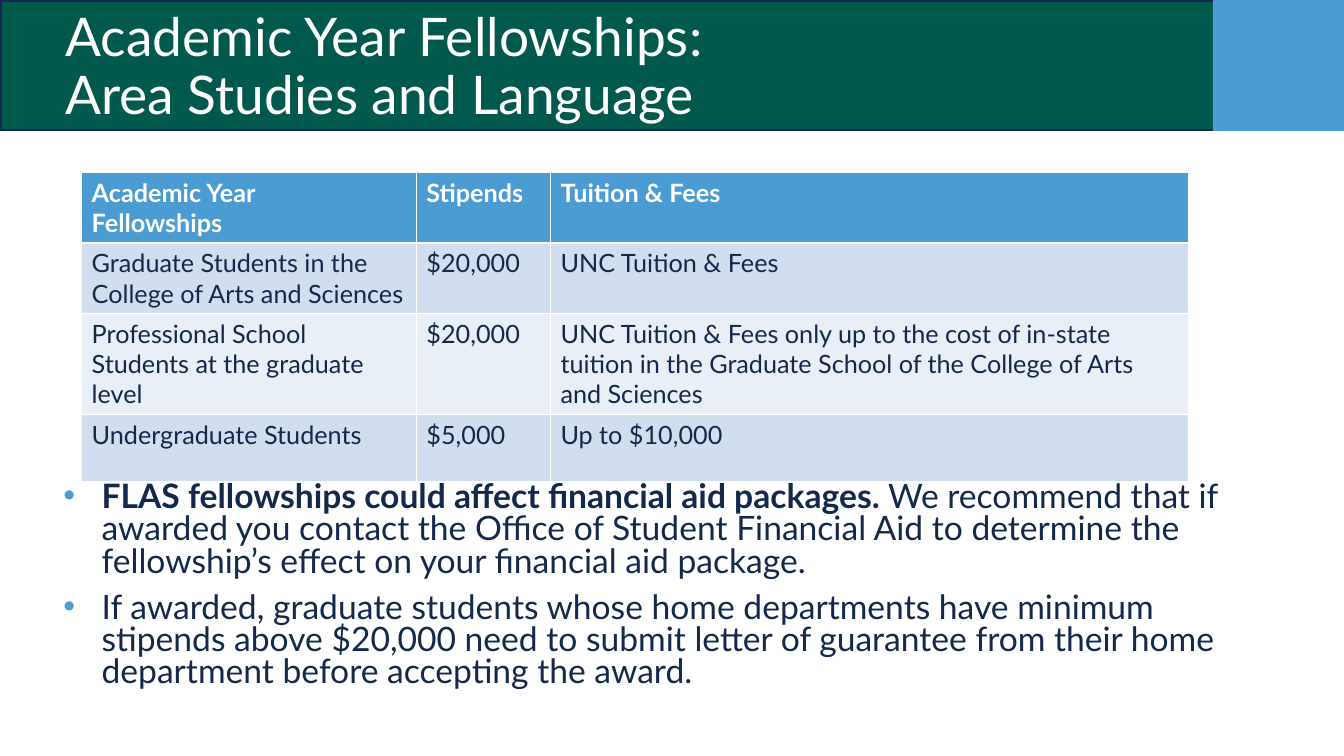
from lxml import etree
from pptx import Presentation
from pptx.dml.color import RGBColor
from pptx.enum.shapes import MSO_SHAPE
from pptx.enum.text import MSO_ANCHOR, MSO_AUTO_SIZE, PP_ALIGN
from pptx.oxml.ns import qn
from pptx.util import Inches, Pt

RECTANGLE = MSO_SHAPE.RECTANGLE
BOTTOM = MSO_ANCHOR.BOTTOM
LEFT = PP_ALIGN.LEFT
NO_AUTOFIT = MSO_AUTO_SIZE.NONE

# Content
TITLE_LINES = ["Academic Year Fellowships:", "Area Studies and Language"]
TABLE_ROWS = [
    ("Academic Year\nFellowships", "Stipends", "Tuition & Fees"),
    ("Graduate Students in the College of Arts and Sciences", "$20,000",
     "UNC Tuition & Fees"),
    ("Professional School Students at the graduate level", "$20,000",
     "UNC Tuition & Fees only up to the cost of in-state tuition in the "
     "Graduate School of the College of Arts and Sciences"),
    ("Undergraduate Students", "$5,000", "Up to $10,000"),
]
# Each bullet is a list of (text, bold) spans
BULLETS = [
    [("FLAS fellowships could affect financial aid packages. ", True),
     ("We recommend that if awarded you contact the Office of Student "
      "Financial Aid to determine the fellowship’s effect on your financial "
      "aid package.", False)],
    [("If awarded, graduate students whose home departments have minimum "
      "stipends above $20,000 need to submit letter of guarantee from their "
      "home department before accepting the award.", False)],
]

# Style
FONT = "Lato"
COLORS = {"navy": "13294B", "text": "13284B", "blue": "4B9CD3",
          "green": "00594C", "white": "FFFFFF",
          "band_dark": "D0DEEF", "band_light": "E9EFF7"}
SLIDE_WIDTH, SLIDE_HEIGHT = 13.33, 7.5
BANNER_HEIGHT = 1.3
BANNER_WIDTH = SLIDE_WIDTH - BANNER_HEIGHT
COLUMN_WIDTHS = [3.32, 1.33, 6.33]
ROW_HEIGHT = 0.67
BULLET_INDENT = 0.38


def rgb(name):
    return RGBColor.from_string(COLORS[name])


def add_block(page, left, top, width, height, fill, line=None):
    block = page.shapes.add_shape(RECTANGLE, Inches(left), Inches(top),
                                  Inches(width), Inches(height))
    block.shadow.inherit = False
    block.fill.solid()
    block.fill.fore_color.rgb = rgb(fill)
    if line:
        block.line.color.rgb = rgb(line)
        block.line.width = Pt(1)
    else:
        block.line.fill.background()


def add_span(para, text, size, color, bold=False):
    span = para.add_run()
    span.text = text
    span.font.name = FONT
    span.font.size = Pt(size)
    span.font.bold = bold
    span.font.color.rgb = rgb(color)


def add_bullet(para):
    props = para._p.get_or_add_pPr()
    props.set("marL", str(Inches(BULLET_INDENT)))
    props.set("indent", str(-Inches(BULLET_INDENT)))
    color = etree.SubElement(props, qn("a:buClr"))
    etree.SubElement(color, qn("a:srgbClr"), val=COLORS["blue"])
    etree.SubElement(props, qn("a:buFont"), typeface="Arial")
    etree.SubElement(props, qn("a:buChar"), char="•")


def add_title(page):
    title = page.shapes.title
    title.left, title.top = Inches(0.55), Inches(0.62)
    title.width, title.height = Inches(11.99), Inches(0.68)
    frame = title.text_frame
    frame.word_wrap = True
    frame.auto_size = NO_AUTOFIT
    frame.vertical_anchor = BOTTOM
    para = frame.paragraphs[0]
    para.alignment = LEFT
    para.line_spacing = 0.9
    for index, line in enumerate(TITLE_LINES):
        if index:
            para.add_line_break()
        add_span(para, line, 38, "white")
    # Bring the title in front of the banner
    page.shapes._spTree.append(title._element)


def add_fellowship_table(page):
    table = page.shapes.add_table(
        len(TABLE_ROWS), len(COLUMN_WIDTHS), Inches(0.81), Inches(1.71),
        Inches(sum(COLUMN_WIDTHS)), Inches(ROW_HEIGHT * len(TABLE_ROWS))).table
    for column, width in zip(table.columns, COLUMN_WIDTHS):
        column.width = Inches(width)
    for row_index, texts in enumerate(TABLE_ROWS):
        table.rows[row_index].height = Inches(ROW_HEIGHT)
        header = row_index == 0
        band = "band_dark" if row_index % 2 else "band_light"
        for column_index, text in enumerate(texts):
            cell = table.cell(row_index, column_index)
            cell.fill.solid()
            cell.fill.fore_color.rgb = rgb("blue" if header else band)
            frame = cell.text_frame
            for line_index, line in enumerate(text.split("\n")):
                para = frame.add_paragraph() if line_index else frame.paragraphs[0]
                add_span(para, line, 18, "white" if header else "text", header)


def add_notes_list(page):
    box = page.shapes.add_textbox(Inches(0.53), Inches(4.74),
                                  Inches(12.2), Inches(2.35))
    frame = box.text_frame
    frame.word_wrap = True
    for index, spans in enumerate(BULLETS):
        para = frame.add_paragraph() if index else frame.paragraphs[0]
        para.line_spacing = 0.8
        if index:
            para.space_before = Pt(10)
        add_bullet(para)
        for text, bold in spans:
            add_span(para, text, 24, "text", bold)


def main():
    deck = Presentation()
    deck.slide_width, deck.slide_height = Inches(SLIDE_WIDTH), Inches(SLIDE_HEIGHT)
    page = deck.slides.add_slide(deck.slide_layouts[5])

    # Banner with its corner square
    add_block(page, 0, 0, BANNER_WIDTH, BANNER_HEIGHT, "navy")
    add_block(page, 0.01, 0.01, BANNER_WIDTH, 1.28, "green", "navy")
    add_block(page, BANNER_WIDTH, 0, BANNER_HEIGHT, BANNER_HEIGHT, "blue")

    # Text and table
    add_notes_list(page)
    add_title(page)
    add_fellowship_table(page)
    deck.save("out.pptx")


if __name__ == "__main__":
    main()
